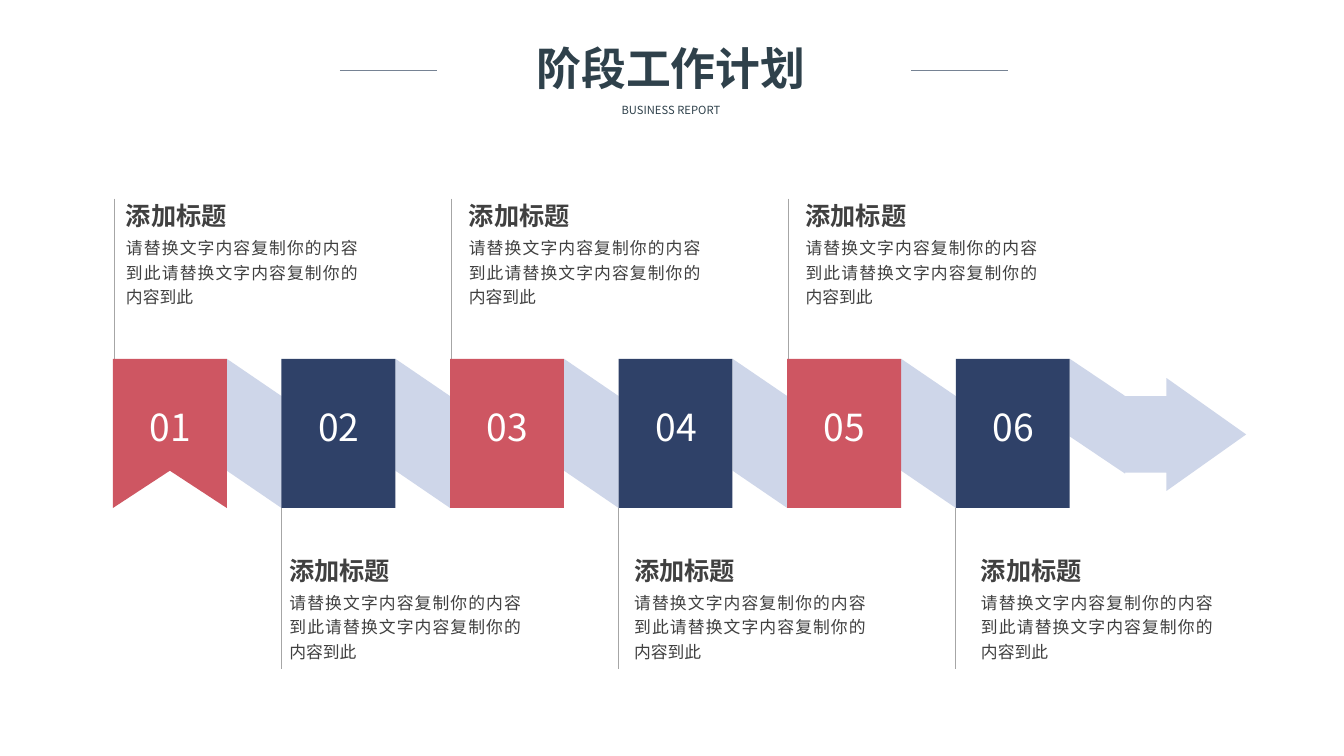
from dataclasses import dataclass

import pptx
import pptx.dml.color
import pptx.enum.shapes
import pptx.enum.text
import pptx.oxml.ns
import pptx.util
from lxml import etree

Inches = pptx.util.Inches
ALIGN = pptx.enum.text.PP_ALIGN
ANCHOR = pptx.enum.text.MSO_ANCHOR


@dataclass(frozen=True)
class Theme:
    font: str = "Noto Sans CJK SC"
    title: str = "2F414B"
    title_rule: str = "768394"
    step_rule: str = "A6A6A6"
    body: str = "404040"
    red: str = "CE5662"
    navy: str = "2F4168"
    ribbon: str = "CED6E9"
    white: str = "FFFFFF"
    title_size: float = 32
    subtitle_size: float = 8
    heading_size: float = 18
    body_size: float = 12
    number_size: float = 26.6
    rule_width: float = 0.5


THEME = Theme()
HEADING = "添加标题"
BODY = "请替换文字内容复制你的内容到此请替换文字内容复制你的内容到此"
CAPTION_LEFTS = (1.12, 2.74, 4.52, 6.16, 7.86, 9.6)
CAPTION_WIDTH, CAPTION_HEIGHT = 2.56, 1.36
UPPER_CAPTION_TOP, LOWER_CAPTION_TOP = 1.86, 5.38
BLOCK_WIDTH, BLOCK_HEIGHT = 1.13, 1.48
FOLD_RISE = 0.37
RULE_LENGTH = 1.6


def rgb(colour):
    return pptx.dml.color.RGBColor.from_string(colour)


def add_text(slide, box, *lines, align=ALIGN.CENTER, anchor=ANCHOR.TOP,
             margins=(0.1, 0.05), line_spacing=None, space_ratio=0):
    """Each line is (text, size, colour, bold); space_ratio is a share of its size."""
    frame = slide.shapes.add_textbox(*map(Inches, box)).text_frame
    frame.word_wrap = True
    frame.vertical_anchor = anchor
    frame.margin_left = frame.margin_right = Inches(margins[0])
    frame.margin_top = frame.margin_bottom = Inches(margins[1])
    for index, (text, size, colour, bold) in enumerate(lines):
        paragraph = frame.add_paragraph() if index else frame.paragraphs[0]
        paragraph.alignment = align
        paragraph.line_spacing = line_spacing
        paragraph.space_before = pptx.util.Pt(size * space_ratio)
        run = paragraph.add_run()
        run.text = text
        run.font.name = THEME.font
        run.font.size = pptx.util.Pt(size)
        run.font.bold = bold
        run.font.color.rgb = rgb(colour)
        east_asian = etree.SubElement(run.font._element, pptx.oxml.ns.qn("a:ea"))
        east_asian.set("typeface", THEME.font)


def add_rule(slide, start, end, colour):
    rule = slide.shapes.add_connector(
        pptx.enum.shapes.MSO_CONNECTOR.STRAIGHT, *map(Inches, start + end))
    rule.line.color.rgb = rgb(colour)
    rule.line.width = pptx.util.Pt(THEME.rule_width)
    etree.SubElement(rule._element.spPr, pptx.oxml.ns.qn("a:effectLst"))


def paint(shape, colour):
    shape.shadow.inherit = False
    shape.fill.solid()
    shape.fill.fore_color.rgb = rgb(colour)
    shape.line.fill.background()


def add_outline(slide, points, colour):
    start, *rest = [(Inches(x), Inches(y)) for x, y in points]
    builder = slide.shapes.build_freeform(*start)
    builder.add_line_segments(rest, close=True)
    paint(builder.convert_to_shape(), colour)


def add_header(slide, left, top, width):
    add_text(slide, (left + 2.49, top + 0.63, 1.59, 0.24),
             ("BUSINESS REPORT", THEME.subtitle_size, THEME.title, False))
    add_text(slide, (left + 1.23, top, 4.11, 0.64),
             ("阶段工作计划", THEME.title_size, THEME.title, True))
    rule_length = 0.96
    for x in (left, left + width - rule_length):
        add_rule(slide, (x, top + 0.35), (x + rule_length, top + 0.35), THEME.title_rule)


def add_fold(slide, left, top, right, height):
    """Slanted band that drops by one fold rise from left to right."""
    add_outline(slide, [(left, top), (right, top + FOLD_RISE),
                        (right, top + FOLD_RISE + height), (left, top + height)],
                THEME.ribbon)


def add_notched_block(slide, left, top):
    right, bottom = left + BLOCK_WIDTH, top + BLOCK_HEIGHT
    add_outline(slide, [(left, top), (right, top), (right, bottom),
                        (left + BLOCK_WIDTH / 2, bottom - FOLD_RISE), (left, bottom)],
                THEME.red)


def add_block(slide, left, top, colour):
    block = slide.shapes.add_shape(
        pptx.enum.shapes.MSO_SHAPE.RECTANGLE,
        *map(Inches, (left, top, BLOCK_WIDTH, BLOCK_HEIGHT)))
    paint(block, colour)


def add_arrow(slide, left, top, width, height):
    neck, middle, shaft = left + 0.41, top + height / 2, 0.18
    bottom = top + height
    add_outline(slide, [(left, top + shaft), (neck, top + shaft), (neck, top),
                        (left + width, middle), (neck, bottom),
                        (neck, bottom - shaft), (left, bottom - shaft)],
                THEME.ribbon)


def add_ribbon(slide, lefts, top):
    for left, following in zip(lefts, lefts[1:]):
        add_fold(slide, left + BLOCK_WIDTH, top, following, BLOCK_HEIGHT - FOLD_RISE)
    tail = lefts[-1] + BLOCK_WIDTH
    add_fold(slide, tail, top, tail + 0.55, 0.77)
    add_arrow(slide, tail + 0.55, top + 0.19, 1.2, 1.12)
    for index, left in enumerate(lefts):
        if index == 0:
            add_notched_block(slide, left, top)
        else:
            add_block(slide, left, top, THEME.navy if index % 2 else THEME.red)
        add_text(slide, (left - 0.13, top + 0.18, 1.4, 0.99),
                 (f"{index + 1:02}", THEME.number_size, THEME.white, False),
                 anchor=ANCHOR.MIDDLE, space_ratio=0.2)


def add_captions(slide, lefts, top):
    """Captions alternate above and below the ribbon, each beside a thin rule."""
    for index, (left, caption_left) in enumerate(zip(lefts, CAPTION_LEFTS)):
        below = index % 2
        x = left if below else left + 0.01
        y = top + BLOCK_HEIGHT if below else top - RULE_LENGTH + 0.01
        add_rule(slide, (x, y), (x, y + RULE_LENGTH), THEME.step_rule)
        caption_top = LOWER_CAPTION_TOP if below else UPPER_CAPTION_TOP
        add_text(slide, (caption_left, caption_top, CAPTION_WIDTH, CAPTION_HEIGHT),
                 (HEADING, THEME.heading_size, THEME.body, True),
                 (BODY, THEME.body_size, THEME.body, False),
                 align=ALIGN.JUSTIFY, margins=(0.13, 0.07),
                 line_spacing=1.2, space_ratio=0.2)


def add_timeline(slide, left, top, last_left):
    count = len(CAPTION_LEFTS)
    pitch = (last_left - left) / (count - 1)
    lefts = [left + index * pitch for index in range(count)]
    add_captions(slide, lefts, top)
    add_ribbon(slide, lefts, top)


def main():
    presentation = pptx.Presentation()
    presentation.slide_width = Inches(13.33)
    presentation.slide_height = Inches(7.5)
    slide = presentation.slides.add_slide(presentation.slide_layouts[6])
    add_header(slide, left=3.37, top=0.35, width=6.63)
    add_timeline(slide, left=1.12, top=3.56, last_left=9.48)
    presentation.save("out.pptx")


if __name__ == "__main__":
    main()
